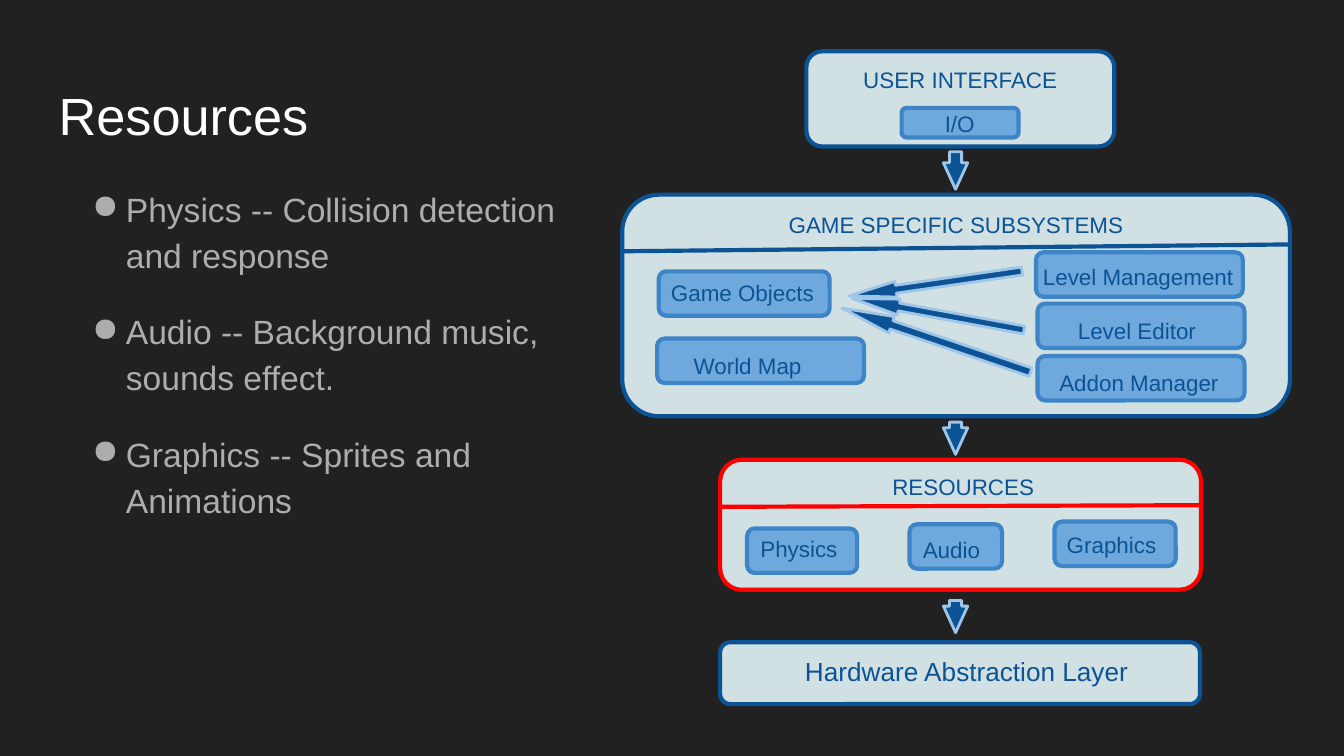
from lxml import etree
from pptx import Presentation
from pptx import util as u
from pptx.dml.color import RGBColor
from pptx.enum import shapes, text
from pptx.oxml.ns import qn

HUES = {"back": "212121", "title": "FFFFFF", "body": "ADADAD", "panel": "D0E0E3",
        "navy": "0B5394", "red": "FF0000", "chip": "6FA8DC", "edge": "3D85C6",
        "glow": "9FC5E8"}
FORM = shapes.MSO_SHAPE
ALIGN = text.PP_ALIGN


def hue(name):
    """Return the colour of that name."""
    return RGBColor.from_string(HUES[name])


def style(para, size, color, **form):
    """Format a paragraph and its font."""
    for key, val in form.items():
        setattr(para, key, val)
    for key, val in {"name": "Arial", "size": u.Pt(size)}.items():
        setattr(para.font, key, val)
    para.font.color.rgb = hue(color)


def pad(frame, left, top, right=0, bottom=0):
    """Set wrapping, top anchor and margins in centimetres."""
    form = {"word_wrap": True, "vertical_anchor": text.MSO_ANCHOR.TOP,
            "margin_left": u.Cm(left), "margin_top": u.Cm(top),
            "margin_right": u.Cm(right), "margin_bottom": u.Cm(bottom)}
    for key, val in form.items():
        setattr(frame, key, val)


def block(slide, kind, area, fill, edge, width):
    """Add a filled and outlined shape."""
    item = slide.shapes.add_shape(kind, *map(u.Cm, area))
    item.shadow.inherit = False
    item.fill.solid()
    item.fill.fore_color.rgb = hue(fill)
    item.line.color.rgb = hue(edge)
    item.line.width = u.Pt(width)
    return item


def label(item, words, left, top, align, size=12):
    """Write a label inside a shape."""
    pad(item.text_frame, left, top)
    para = item.text_frame.paragraphs[0]
    para.text = words
    style(para, size, "navy", alignment=align)


def arrow(slide, area, head=1.09, turn=0):
    """Add a block arrow, turned by some degrees."""
    item = block(slide, FORM.DOWN_ARROW, area, "navy", "glow", 1.5)
    item.adjustments[1] = head
    item.rotation = turn


def rule(slide, box, start, end, color):
    """Draw a divider between two points of a box."""
    ends = [u.Cm(a + b) for point in (start, end) for a, b in zip(box, point)]
    line = slide.shapes.add_connector(shapes.MSO_CONNECTOR.STRAIGHT, *ends)
    line.line.color.rgb = hue(color)
    line.line.width = u.Pt(2.25)
    etree.SubElement(line._element.spPr, qn("a:effectLst"))


def panel(slide, box, words, top, chips=(), edge="navy", left=0, size=12, high=0.84):
    """Add a titled panel with its chips."""
    item = block(slide, FORM.ROUNDED_RECTANGLE, box, "panel", edge, 2.25)
    label(item, words, left, top, ALIGN.CENTER, size)
    for name, x, y, wide, inx, iny in chips:
        area = (box[0] + x, box[1] + y, wide, high)
        chip = block(slide, FORM.ROUNDED_RECTANGLE, area, "chip", "edge", 2.25)
        label(chip, name, inx, iny, ALIGN.LEFT)


def heading(slide, box):
    """Add the slide title."""
    frame = slide.shapes.add_textbox(*map(u.Cm, box)).text_frame
    pad(frame, 0.25, 0.33, 0.25, 0.25)
    frame.text = "Resources"
    style(frame.paragraphs[0], 28, "title")


def points(slide, box):
    """Add the bulleted list."""
    frame = slide.shapes.add_textbox(*map(u.Cm, box)).text_frame
    pad(frame, 0.25, 0.25, 0.25, 0.25)
    frame.text = "\n".join(["Physics -- Collision detection and response",
                            "Audio -- Background music, sounds effect.",
                            "Graphics -- Sprites and Animations"])
    for para in frame.paragraphs:
        style(para, 18, "body", line_spacing=1.15, space_after=u.Pt(16))
        props = para._p.get_or_add_pPr()
        props.set("marL", str(u.Cm(1.27)))
        props.set("indent", str(-u.Cm(0.64)))
        mark = etree.Element(qn("a:buChar"), char="●")
        props.insert_element_before(mark, "a:tabLst", "a:defRPr", "a:extLst")


def screen(slide, box):
    """Add the user interface panel."""
    panel(slide, box, "USER INTERFACE", 0.19,
          [("I/O", 1.8, 1.07, 2.21, 0.79, 0.02)], high=0.56)


def game(slide, box):
    """Add the game subsystems panel with its inner arrows."""
    chips = [("Game Objects", 0.69, 1.45, 3.23, 0.19, 0.11),
             ("World Map", 0.66, 2.72, 3.91, 0.65, 0.21),
             ("Level Management", 7.82, 1.09, 3.91, 0.09, 0.16),
             ("Level Editor", 7.85, 2.06, 3.91, 0.72, 0.21),
             ("Addon Manager", 7.85, 3.05, 3.91, 0.37, 0.21)]
    panel(slide, box, "GAME SPECIFIC SUBSYSTEMS", 0.1, chips)
    rule(slide, box, (-0.03, 1.07), (12.62, 0.94), "navy")
    for x, y, wide, high, turn in [(5.77, 0.87, 0.33, 3.76, 108.8),
                                   (5.77, 0.03, 0.3, 3.3, 81.8),
                                   (5.82, 0.61, 0.3, 3.3, 100.4)]:
        arrow(slide, (box[0] + x, box[1] + y, wide, high), 2.98, turn)


def assets(slide, box):
    """Add the highlighted resources panel."""
    chips = [("Physics", 0.51, 1.3, 2.08, 0.21, 0.09),
             ("Audio", 3.58, 1.22, 1.75, 0.21, 0.19),
             ("Graphics", 6.32, 1.17, 2.29, 0.19, 0.14)]
    panel(slide, box, "RESOURCES", 0.13, chips, "red", 0.1)
    rule(slide, box, (-0.03, 0.89), (9.07, 0.86), "red")


def main():
    """Build and save the slide."""
    deck = Presentation()
    deck.slide_width, deck.slide_height = u.Cm(25.4), u.Cm(14.29)
    slide = deck.slides.add_slide(deck.slide_layouts[6])
    slide.background.fill.solid()
    slide.background.fill.fore_color.rgb = hue("back")
    heading(slide, (0.86, 1.24, 23.67, 1.6))
    points(slide, (0.86, 3.2, 10.74, 9.5))
    screen(slide, (15.24, 0.97, 5.82, 1.8))
    game(slide, (11.76, 3.68, 12.62, 4.19))
    assets(slide, (13.61, 8.69, 9.09, 2.46))
    panel(slide, (13.61, 12.14, 9.07, 1.17), "Hardware Abstraction Layer", 0.19,
          left=0.25, size=14)
    for top, high in [(2.87, 0.71), (7.98, 0.61), (11.35, 0.61)]:
        arrow(slide, (17.83, top, 0.46, high))
    deck.save("out.pptx")


if __name__ == "__main__":
    main()
